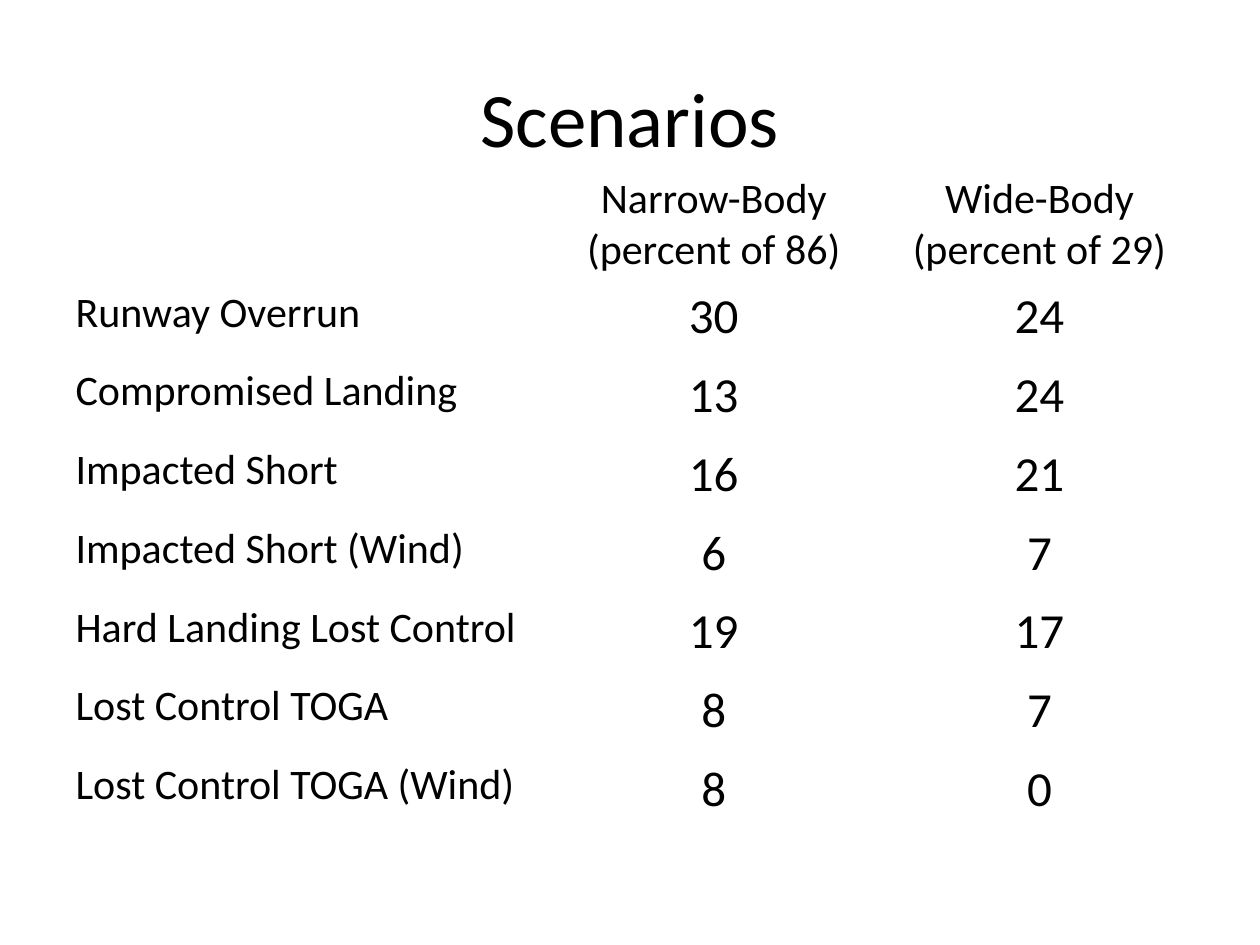
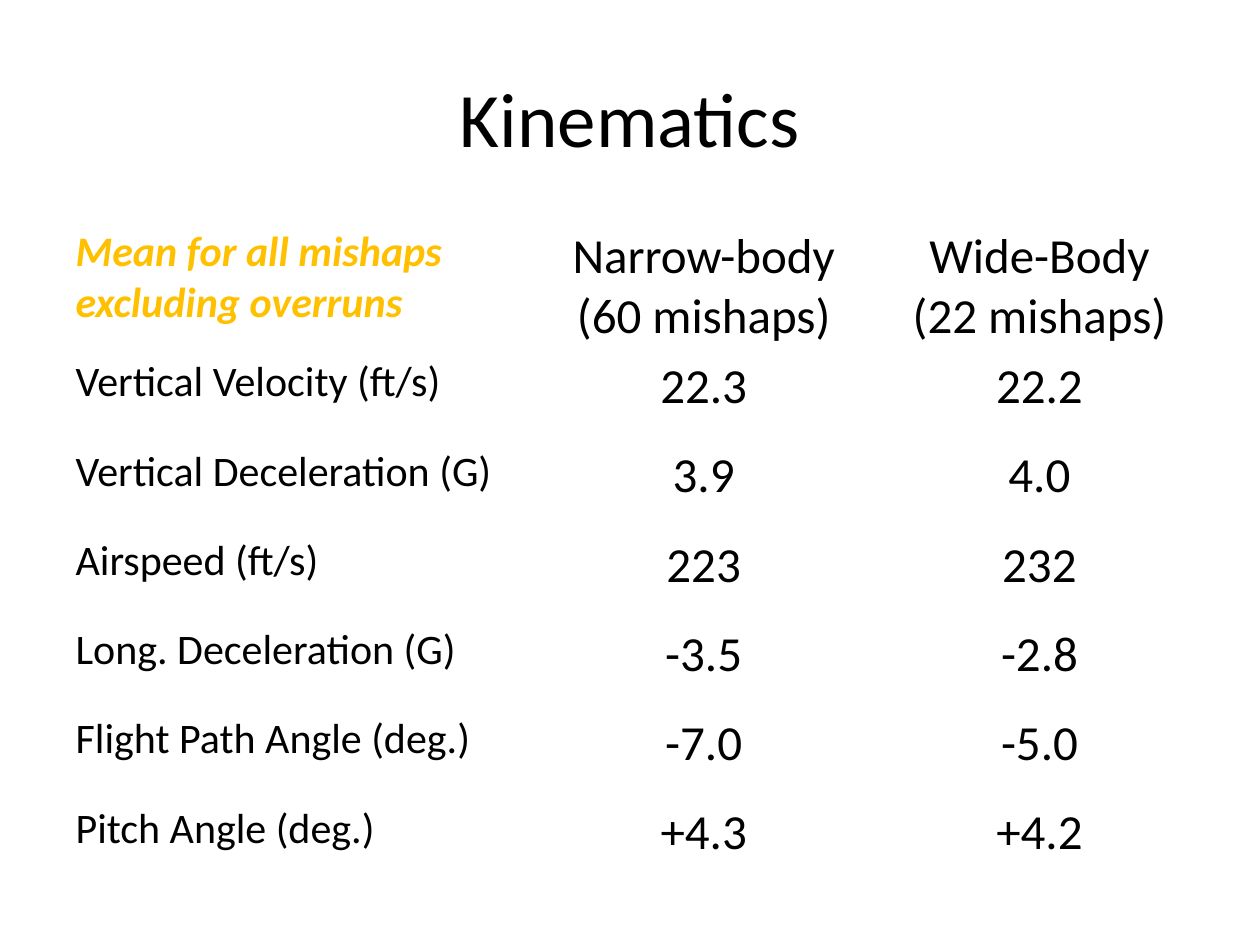
from dataclasses import dataclass

from pptx import Presentation
from pptx.dml.color import RGBColor as RGB
from pptx.enum.text import MSO_ANCHOR as Anchor, PP_ALIGN as Align
from pptx.util import Inches, Pt


@dataclass(frozen=True)
class Theme:
    font: str = "Calibri"
    paper: RGB = RGB(0xFF, 0xFF, 0xFF)
    ink: RGB = RGB(0, 0, 0)
    gold: RGB = RGB(0xFF, 0xC0, 0)
    title: int = 44
    value: int = 28
    label: int = 24


class Deck:
    def __init__(self, theme):
        self.theme = theme
        self.prs = Presentation()
        self.prs.slide_width = Inches(10)
        self.prs.slide_height = Inches(7.5)
        self.slide = None

    def page(self, title):
        self.slide = self.prs.slides.add_slide(self.prs.slide_layouts[6])
        fill = self.slide.background.fill
        fill.solid()
        fill.fore_color.rgb = self.theme.paper
        box = self.slide.shapes.add_textbox(
            Inches(0.5), Inches(0.3), Inches(9), Inches(1.25))
        frame = box.text_frame
        frame.word_wrap = True
        frame.vertical_anchor = Anchor.MIDDLE
        self.label(frame, title, self.theme.title, Align.CENTER)

    def label(self, frame, text, size, align, accent=False):
        para = frame.paragraphs[0]
        para.alignment = align
        run = para.add_run()
        run.text = text
        font = run.font
        font.name = self.theme.font
        font.size = Pt(size)
        font.bold = font.italic = accent
        font.color.rgb = self.theme.gold if accent else self.theme.ink

    def table(self, top, height, widths, head, head_size, rows):
        grid = [head, *rows]
        table = self.slide.shapes.add_table(
            len(grid), len(head), Inches(0.5), Inches(top),
            Inches(sum(widths)), Inches(height)).table
        table.first_row = table.horz_banding = False
        for col, width in zip(table.columns, widths):
            col.width = Inches(width)
        for r, row in enumerate(grid):
            for c, text in enumerate(row):
                cell = table.cell(r, c)
                cell.fill.background()
                if not text:
                    continue
                if c == 0:
                    size, align = self.theme.label, Align.LEFT
                else:
                    size = self.theme.value if r else head_size
                    align = Align.CENTER
                self.label(cell.text_frame, text, size, align,
                           accent=r == c == 0)


def main():
    theme = Theme()
    deck = Deck(theme)

    deck.page("Scenarios")
    deck.table(
        1.33, 5, (3.83, 2.67, 2.5),
        ("", "Narrow-Body (percent of 86)", "Wide-Body (percent of 29)"),
        theme.label,
        [
            ("Runway Overrun", "30", "24"),
            ("Compromised Landing", "13", "24"),
            ("Impacted Short", "16", "21"),
            ("Impacted Short (Wind)", "6", "7"),
            ("Hard Landing Lost Control", "19", "17"),
            ("Lost Control TOGA", "8", "7"),
            ("Lost Control TOGA (Wind)", "8", "0"),
        ])

    deck.page("Kinematics")
    deck.table(
        1.75, 4.96, (3.67, 2.83, 2.5),
        ("Mean for all mishaps excluding overruns",
         "Narrow-body (60 mishaps)", "Wide-Body (22 mishaps)"),
        theme.value,
        [
            ("Vertical Velocity (ft/s)", "22.3", "22.2"),
            ("Vertical Deceleration (G)", "3.9", "4.0"),
            ("Airspeed (ft/s)", "223", "232"),
            ("Long. Deceleration (G)", "-3.5", "-2.8"),
            ("Flight Path Angle (deg.)", "-7.0", "-5.0"),
            ("Pitch Angle (deg.)", "+4.3", "+4.2"),
        ])

    deck.prs.save("out.pptx")


if __name__ == "__main__":
    main()
